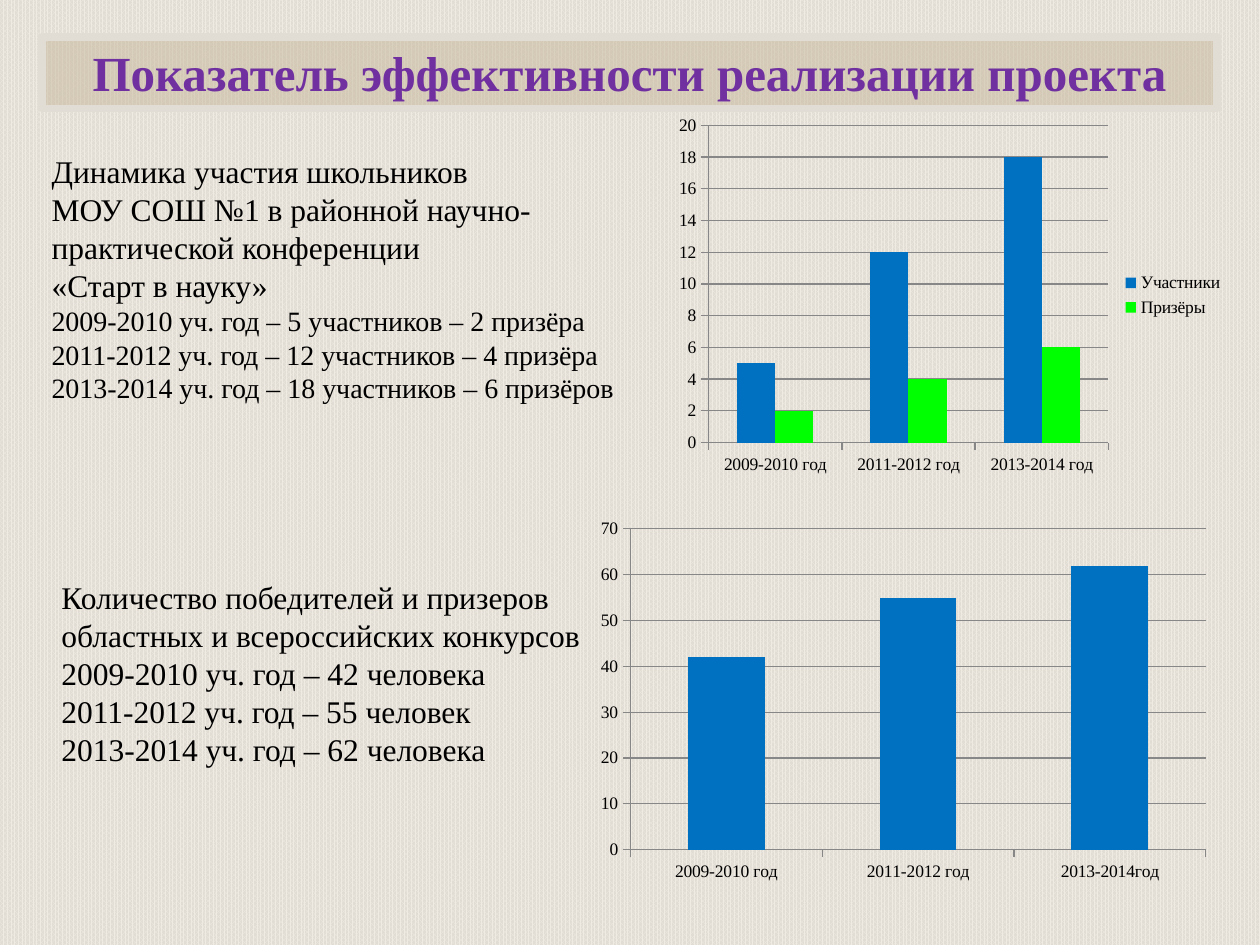
from dataclasses import dataclass

import lxml.etree
import pptx
import pptx.chart.data
import pptx.dml.color
import pptx.enum.chart
import pptx.enum.dml
import pptx.enum.shapes
import pptx.enum.text
import pptx.oxml.ns
import pptx.util
from pptx.util import Cm

FONT = "Times New Roman"
BLACK, GREY, BLUE, GREEN = "000000", "878787", "0070C0", "00FF00"


@dataclass
class Box:
    left: float
    top: float
    width: float
    height: float

    def place(self) -> tuple:
        return Cm(self.left), Cm(self.top), Cm(self.width), Cm(self.height)


@dataclass
class Row:
    name: str
    vals: tuple
    color: str


@dataclass
class Graph:
    box: Box
    cats: tuple
    rows: tuple
    top: int
    step: int
    legend: bool = False


@dataclass
class Note:
    box: Box
    lines: tuple  # (text, size) pairs


NOTES = (
    Note(Box(0.79, 2.92, 13.31, 5.38), (
        ("Динамика участия школьников", 18),
        ("МОУ СОШ №1 в районной научно-практической конференции", 18),
        ("«Старт в науку»", 18),
        ("2009-2010 уч. год – 5 участников – 2 призёра", 16),
        ("2011-2012 уч. год – 12 участников – 4 призёра", 16),
        ("2013-2014 уч. год – 18 участников – 6 призёров", 16))),
    Note(Box(0.99, 11.51, 12.9, 4.11), (
        ("Количество победителей и призеров областных и всероссийских конкурсов", 18),
        ("2009-2010 уч. год – 42 человека", 18),
        ("2011-2012 уч. год – 55 человек", 18),
        ("2013-2014 уч. год – 62 человека", 18))),
)

GRAPHS = (
    Graph(Box(13.46, 2.18, 11.46, 7.54),
          ("2009-2010 год", "2011-2012 год", "2013-2014 год"),
          (Row("Участники", (5, 12, 18), BLUE), Row("Призёры", (2, 4, 6), GREEN)),
          top=20, step=2, legend=True),
    Graph(Box(11.86, 10.31, 12.7, 7.62),
          ("2009-2010 год", "2011-2012 год", "2013-2014год"),
          (Row("Series 1", (42, 55, 62), BLUE),), top=70, step=10),
)


def rgb(code: str) -> pptx.dml.color.RGBColor:
    return pptx.dml.color.RGBColor.from_string(code)


def style(font, size: float, color: str = BLACK, bold: bool = False) -> None:
    font.name, font.size, font.bold = FONT, pptx.util.Pt(size), bold
    font.color.rgb = rgb(color)


def write(para, text: str, *, size: float, color: str = BLACK,
          bold: bool = False, align=pptx.enum.text.PP_ALIGN.LEFT) -> None:
    para.alignment = align
    run = para.add_run()
    run.text = text
    style(run.font, size, color, bold)


def paint(slide) -> None:
    """Give the slide its woven background."""
    fill = slide.background.fill
    fill.patterned()
    fill.pattern = pptx.enum.dml.MSO_PATTERN.PERCENT_80
    fill.fore_color.rgb = rgb("EFEBE3")
    fill.back_color.rgb = rgb("E2DDD4")


def add_title(slide, text: str) -> None:
    bar = slide.shapes.add_shape(pptx.enum.shapes.MSO_SHAPE.RECTANGLE,
                                 *Box(0.84, 0.74, 23.7, 1.45).place())
    bar.shadow.inherit = False
    bar.fill.solid()
    bar.fill.fore_color.rgb = rgb("C5B699")
    tint = bar.fill._xPr.find(".//" + pptx.oxml.ns.qn("a:srgbClr"))
    lxml.etree.SubElement(tint, pptx.oxml.ns.qn("a:alpha"), val="50000")
    bar.line.color.rgb = rgb("E2DDD4")
    bar.line.width = pptx.util.Pt(4.5)
    frame = bar.text_frame
    frame.word_wrap = True
    frame.vertical_anchor = pptx.enum.text.MSO_ANCHOR.TOP
    write(frame.paragraphs[0], text, size=28, color="7030A0", bold=True,
          align=pptx.enum.text.PP_ALIGN.CENTER)


def add_note(slide, note: Note) -> None:
    frame = slide.shapes.add_textbox(*note.box.place()).text_frame
    frame.word_wrap = True
    frame.vertical_anchor = pptx.enum.text.MSO_ANCHOR.MIDDLE
    for i, (text, size) in enumerate(note.lines):
        para = frame.add_paragraph() if i else frame.paragraphs[0]
        write(para, text, size=size)


def add_graph(slide, graph: Graph) -> None:
    data = pptx.chart.data.CategoryChartData()
    data.categories = graph.cats
    for row in graph.rows:
        data.add_series(row.name, row.vals)
    kind = pptx.enum.chart.XL_CHART_TYPE.COLUMN_CLUSTERED
    chart = slide.shapes.add_chart(kind, *graph.box.place(), data).chart
    style(chart.font, 10)
    chart.has_title = False
    chart.has_legend = graph.legend
    if graph.legend:
        chart.legend.position = pptx.enum.chart.XL_LEGEND_POSITION.RIGHT
        chart.legend.include_in_layout = False
    plot = chart.plots[0]
    plot.gap_width, plot.overlap, plot.vary_by_categories = 150, 0, False
    for bars, row in zip(plot.series, graph.rows):
        bars.format.fill.solid()
        bars.format.fill.fore_color.rgb = rgb(row.color)
    for axis in (chart.category_axis, chart.value_axis):
        axis.major_tick_mark = pptx.enum.chart.XL_TICK_MARK.OUTSIDE
        axis.format.line.color.rgb = rgb(GREY)
    scale = chart.value_axis
    scale.minimum_scale, scale.maximum_scale = 0, graph.top
    scale.major_unit = graph.step
    scale.has_major_gridlines = True
    scale.major_gridlines.format.line.color.rgb = rgb(GREY)


def main() -> None:
    deck = pptx.Presentation()
    deck.slide_width, deck.slide_height = Cm(25.4), Cm(19.05)
    slide = deck.slides.add_slide(deck.slide_layouts[6])
    paint(slide)
    add_title(slide, "Показатель эффективности реализации проекта")
    for note in NOTES:
        add_note(slide, note)
    for graph in GRAPHS:
        add_graph(slide, graph)
    deck.save("out.pptx")


if __name__ == "__main__":
    main()
